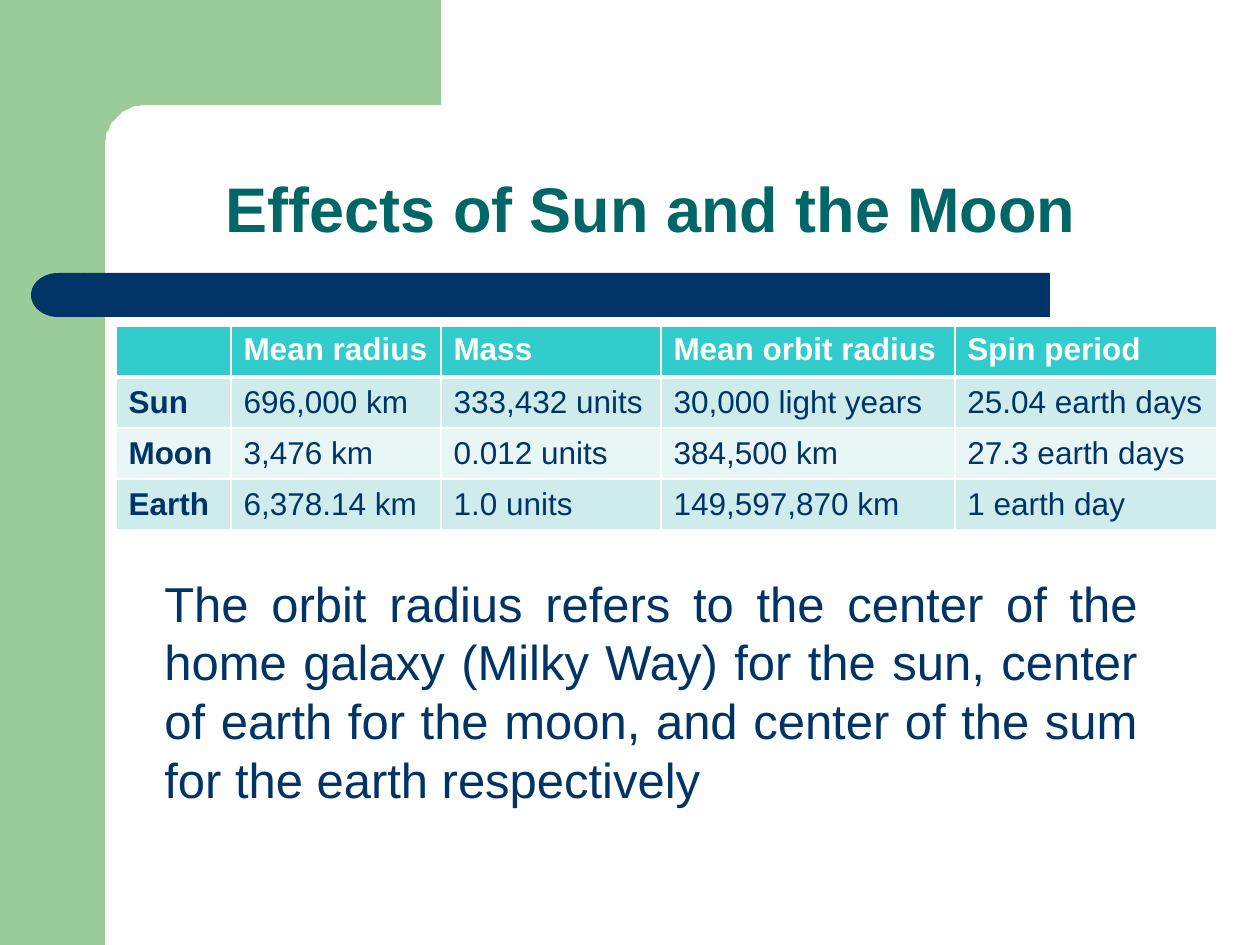
import math
from lxml import etree
from pptx import Presentation
from pptx import util as u
from pptx.dml.color import RGBColor
from pptx.enum import shapes, text
from pptx.oxml.ns import qn

PX = u.Inches(1) // 126
GREEN, NAVY, TEAL, WHITE = "99CC99", "003366", "006666", "FFFFFF"
HEADER_FILL, BANDS = "33CCCC", ("CEECEC", "E8F6F6")

TITLE = "Effects of Sun and the Moon"
ROWS = [
    ("", "Mean radius", "Mass", "Mean orbit radius", "Spin period"),
    ("Sun", "696,000 km", "333,432 units", "30,000 light years", "25.04 earth days"),
    ("Moon", "3,476 km", "0.012 units", "384,500 km", "27.3 earth days"),
    ("Earth", "6,378.14 km", "1.0 units", "149,597,870 km", "1 earth day"),
]
COLUMN_WIDTHS = (115, 210, 220, 294, 262)
ROW_HEIGHT = 51
NOTE = ("The orbit radius refers to the center of the home galaxy (Milky Way) "
        "for the sun, center of earth for the moon, and center of the sum "
        "for the earth respectively")


def box(*lengths):
    return [length * PX for length in lengths]


def rgb(colour):
    return RGBColor.from_string(colour)


def paint(shape, colour):
    shape.shadow.inherit = False
    shape.line.fill.background()
    shape.fill.solid()
    shape.fill.fore_color.rgb = rgb(colour)


def add_block(kind, place, colour):
    block = slide.shapes.add_shape(kind, *box(*place))
    paint(block, colour)
    return block


def write(paragraph, words, size, colour, bold=False):
    run = paragraph.add_run()
    run.text = words
    run.font.name = "Arial"
    run.font.size = u.Pt(size)
    run.font.bold = bold
    run.font.color.rgb = rgb(colour)


def add_borders(cell, bottom):
    """Draw white borders, 1 pt except where the bottom or top one differs."""
    properties = cell._tc.get_or_add_tcPr()
    for place, (side, width) in enumerate(
            (("L", 1), ("R", 1), ("T", 1), ("B", bottom))):
        line = etree.Element(qn(f"a:ln{side}"), w=str(u.Pt(width)))
        fill = etree.SubElement(line, qn("a:solidFill"))
        etree.SubElement(fill, qn("a:srgbClr"), val=WHITE)
        properties.insert(place, line)


prs = Presentation()
prs.slide_width, prs.slide_height = box(1260, 945)
slide = prs.slides.add_slide(prs.slide_layouts[6])

# Green frame with a rounded inner corner
add_block(shapes.MSO_SHAPE.RECTANGLE, (0, 0, 105, 945), GREEN)
arc = [(146 - 41 * math.sin(math.radians(a)), 146 - 41 * math.cos(math.radians(a)))
       for a in range(0, 91, 5)]
corner = slide.shapes.build_freeform(441, 0, scale=PX)
corner.add_line_segments([(441, 105), *arc, (105, 161), (63, 161), (63, 0)])
paint(corner.convert_to_shape(), GREEN)

# Navy bar with a round left end
add_block(shapes.MSO_SHAPE.RECTANGLE, (84, 273, 966, 44), NAVY)
add_block(shapes.MSO_SHAPE.FLOWCHART_DELAY, (31, 273, 54, 44), NAVY).rotation = 180

title = slide.shapes.add_shape(shapes.MSO_SHAPE.ROUNDED_RECTANGLE,
                               *box(105, 105, 1092, 158))
title.adjustments[0] = 0.22
title.shadow.inherit = False
title.fill.background()
title.line.fill.background()
title.text_frame.word_wrap = True
title.text_frame.vertical_anchor = text.MSO_ANCHOR.BOTTOM
heading = title.text_frame.paragraphs[0]
heading.alignment = text.PP_ALIGN.CENTER
heading.line_spacing = 0.9
write(heading, TITLE, 36, TEAL, bold=True)

table = slide.shapes.add_table(
    len(ROWS), len(COLUMN_WIDTHS),
    *box(116, 326, sum(COLUMN_WIDTHS), ROW_HEIGHT * len(ROWS))).table
for column, width in zip(table.columns, COLUMN_WIDTHS):
    column.width = width * PX
for r, row in enumerate(ROWS):
    table.rows[r].height = ROW_HEIGHT * PX
    header = r == 0
    for c, words in enumerate(row):
        cell = table.cell(r, c)
        cell.fill.solid()
        cell.fill.fore_color.rgb = rgb(HEADER_FILL if header else BANDS[(r - 1) % 2])
        add_borders(cell, bottom=3 if header else 1)
        if not header:
            cell.vertical_anchor = text.MSO_ANCHOR.MIDDLE
        if words:
            write(cell.text_frame.paragraphs[0], words, 18,
                  WHITE if header else NAVY, bold=header or c == 0)

note = slide.shapes.add_textbox(*box(152, 567, 998, 251)).text_frame
note.word_wrap = True
note.paragraphs[0].alignment = text.PP_ALIGN.JUSTIFY
write(note.paragraphs[0], NOTE, 28, NAVY)

prs.save("out.pptx")
